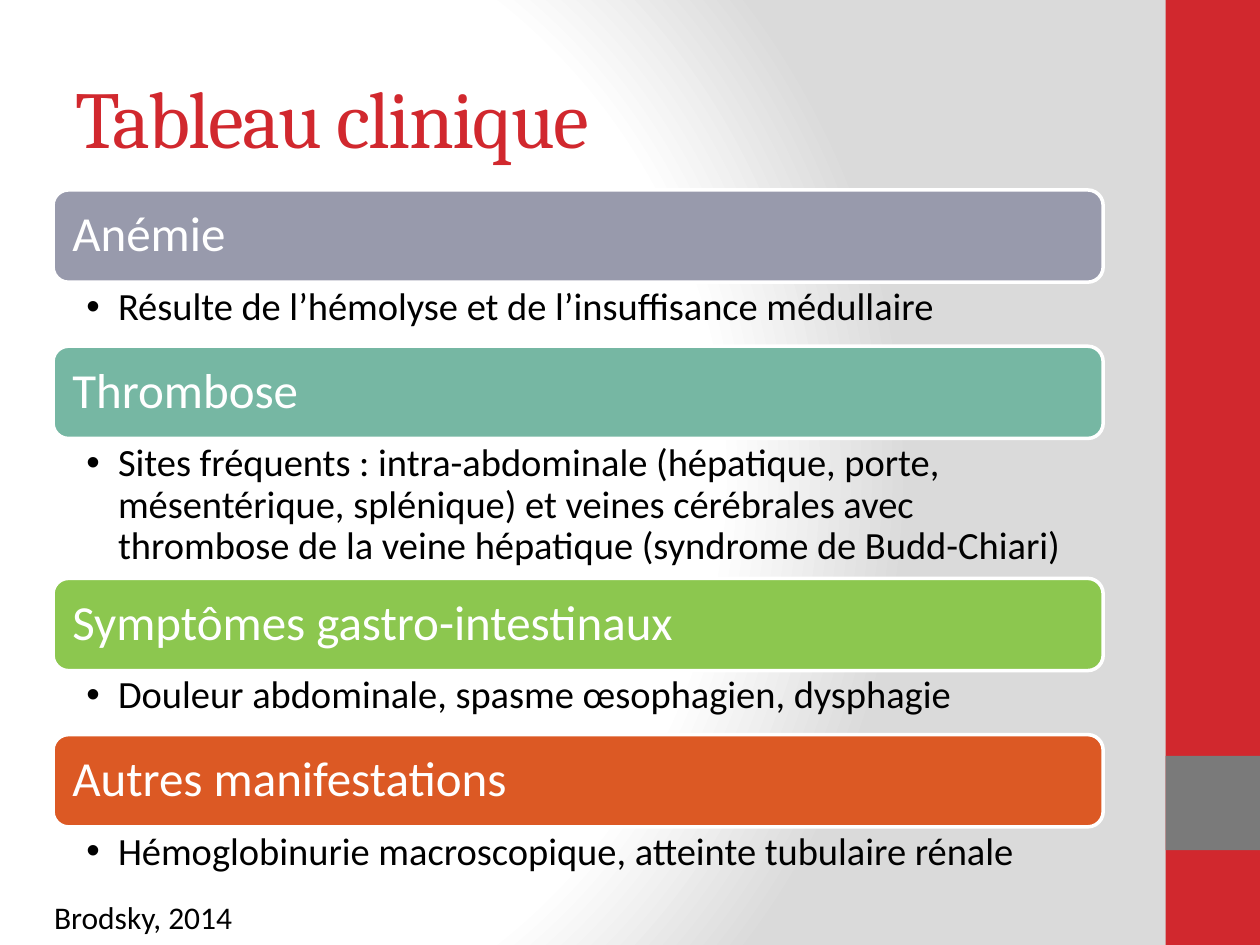
import pptx
import pptx.util
import pptx.dml.color
import pptx.enum.shapes
import pptx.enum.text
import pptx.oxml
import pptx.oxml.ns

Cm = pptx.util.Cm
Pt = pptx.util.Pt
RGB = pptx.dml.color.RGBColor
SHAPE = pptx.enum.shapes.MSO_SHAPE
ANCHOR = pptx.enum.text.MSO_ANCHOR
FIT = pptx.enum.text.MSO_AUTO_SIZE
ALIGN = pptx.enum.text.PP_ALIGN
qn = pptx.oxml.ns.qn

RED = RGB(0xD1, 0x28, 0x2E)
GREY = RGB(0x7A, 0x7A, 0x7A)
WHITE = RGB(0xFF, 0xFF, 0xFF)
BLACK = RGB(0, 0, 0)
MAUVE = RGB(0x98, 0x9A, 0xAC)
TEAL = RGB(0x76, 0xB7, 0xA3)
GREEN = RGB(0x8C, 0xC7, 0x4F)
ORANGE = RGB(0xDC, 0x59, 0x24)

BAR = 1.86  # bar height, cm
LINE = 1.29  # height of a one-line list, cm

# Heading, bar colour, list height in cm, list text
SIGNS = [
    ("Anémie", MAUVE, LINE,
     "Résulte de l’hémolyse et de l’insuffisance médullaire"),
    ("Thrombose", TEAL, 2.82,
     "Sites fréquents : intra-abdominale (hépatique, porte, mésentérique, "
     "splénique) et veines cérébrales avec thrombose de la veine hépatique "
     "(syndrome de Budd-Chiari)"),
    ("Symptômes gastro-intestinaux", GREEN, LINE,
     "Douleur abdominale, spasme œsophagien, dysphagie"),
    ("Autres manifestations", ORANGE, LINE,
     "Hémoglobinurie macroscopique, atteinte tubulaire rénale"),
]


def place(shape, left, top, width, height):
    shape.left, shape.top = Cm(left), Cm(top)
    shape.width, shape.height = Cm(width), Cm(height)


def write(shape, text, font, size, color, anchor, pads=(0.25, 0.13, 0.25, 0.13)):
    """Add one left-aligned run and return its paragraph and run."""
    frame = shape.text_frame
    frame.word_wrap = True
    frame.auto_size = FIT.NONE
    frame.vertical_anchor = anchor
    (frame.margin_left, frame.margin_top,
     frame.margin_right, frame.margin_bottom) = map(Cm, pads)
    para = frame.paragraphs[0]
    para.alignment = ALIGN.LEFT
    para.space_before = Pt(0)
    run = para.add_run()
    run.text = text
    run.font.name, run.font.size = font, Pt(size)
    run.font.bold = False
    run.font.color.rgb = color
    return para, run


def add_block(slide, kind, left, top, width, height, color):
    shape = slide.shapes.add_shape(
        kind, Cm(left), Cm(top), Cm(width), Cm(height))
    shape.shadow.inherit = False
    shape.fill.solid()
    shape.fill.fore_color.rgb = color
    shape.line.fill.background()
    return shape


def paint_back(slide):
    """Round gradient from white to light grey."""
    slide.background.fill.solid()
    back = slide.element.find(".//" + qn("p:bgPr"))
    stops = "".join(
        f'<a:gs pos="{pos}000"><a:srgbClr val="{color}"/></a:gs>'
        for pos, color in [(0, "FFFFFF"), (75, "FFFFFF"), (100, "DADADA")])
    back.replace(back[0], pptx.oxml.parse_xml(
        f'<a:gradFill {pptx.oxml.ns.nsdecls("a")} rotWithShape="1">'
        f'<a:gsLst>{stops}</a:gsLst><a:path path="circle">'
        '<a:fillToRect l="20000" t="50000" r="100000" b="50000"/>'
        '</a:path></a:gradFill>'))


def add_side(slide, left, top, width, height):
    """Red band with a grey square."""
    add_block(slide, SHAPE.RECTANGLE, left, top, width, height, RED)
    add_block(slide, SHAPE.RECTANGLE, left, top + 0.8 * height,
              width, width, GREY)


def add_title(slide, left, top, width, height):
    title = slide.shapes.title
    place(title, left, top, width, height)
    run = write(title, "Tableau clinique", "Cambria", 46, RED,
                ANCHOR.MIDDLE)[1]
    run.font._element.set("spc", "-100")


def add_list(body, text, left, top, width, height):
    """Bulleted text in a body placeholder."""
    place(body, left, top, width, height)
    para = write(body, text, "Calibri", 22, BLACK, ANCHOR.TOP,
                 (0.67, 0.1, 0.56, 0.1))[0]
    para.line_spacing = 0.9
    props = para._p.get_or_add_pPr()
    props.set("marL", str(Cm(0.64)))
    props.set("indent", str(-Cm(0.64)))
    for tag, key, val in [("buFont", "typeface", "Arial"),
                          ("buChar", "char", "•")]:
        mark = props.makeelement(qn("a:" + tag), {key: val})
        props.append(mark)


def add_signs(slide, left, top, width):
    """Stack of coloured bars, each with its list below."""
    bodies = [p for p in slide.placeholders if p.placeholder_format.idx > 0]
    for body, (head, color, tall, text) in zip(bodies, SIGNS):
        bar = add_block(slide, SHAPE.ROUNDED_RECTANGLE,
                        left, top, width, BAR, color)
        bar.line.color.rgb = WHITE
        bar.line.width = Pt(2)
        para = write(bar, head, "Calibri", 28, WHITE, ANCHOR.MIDDLE,
                     (0.3, 0.3, 0.3, 0.3))[0]
        para.line_spacing = 0.9
        add_list(body, text, left, top + BAR, width, tall)
        top += BAR + tall


def add_source(slide, left, top, width, height):
    box = slide.shapes.add_textbox(Cm(left), Cm(top), Cm(width), Cm(height))
    write(box, "Brodsky, 2014", "Calibri", 18, BLACK, ANCHOR.TOP)


def main():
    deck = pptx.Presentation()
    deck.slide_width, deck.slide_height = Cm(25.4), Cm(19.05)
    # The comparison layout has a title and four bodies
    slide = deck.slides.add_slide(deck.slide_layouts[4])
    paint_back(slide)
    add_side(slide, 23.5, 0, 1.9, 19.05)
    add_title(slide, 1.27, 0.76, 21.17, 3.18)
    add_signs(slide, 1.07, 3.83, 21.17)
    add_source(slide, 0.84, 17.98, 6.55, 1.02)
    deck.save("out.pptx")


if __name__ == "__main__":
    main()
